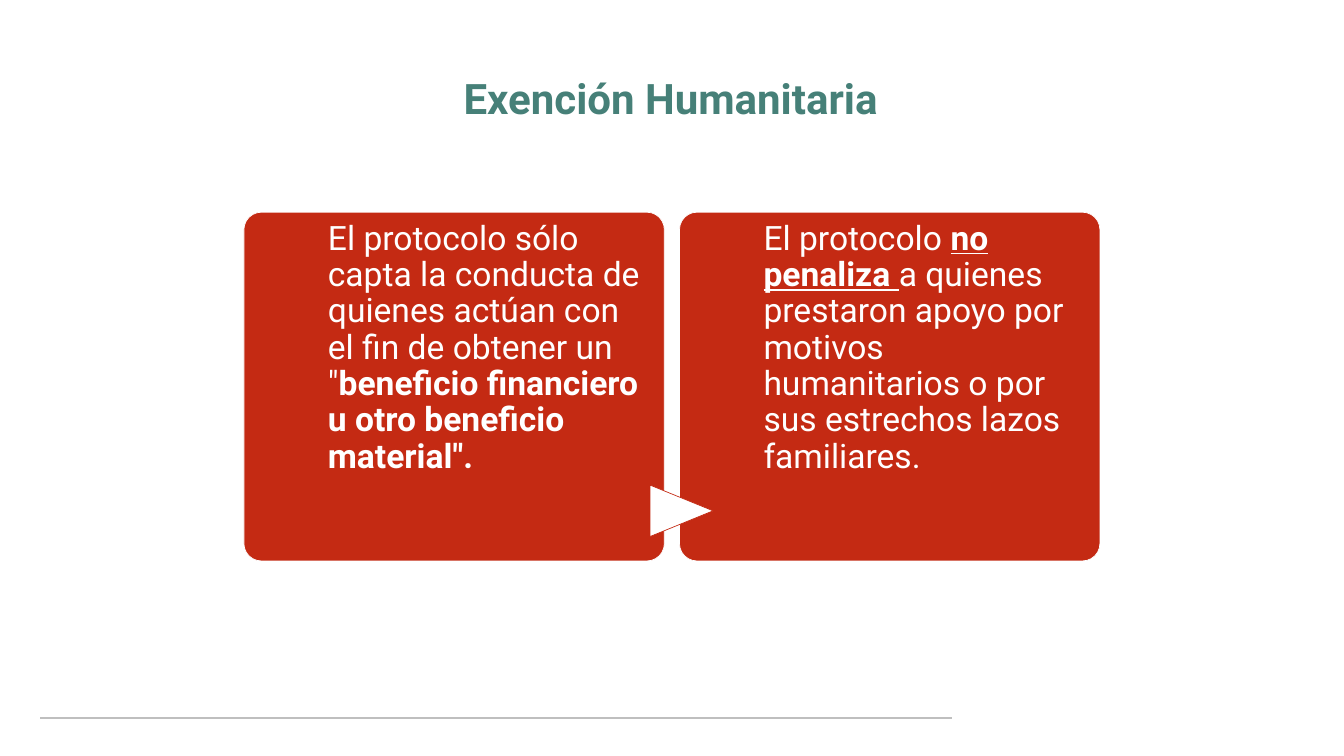
from dataclasses import dataclass

from pptx import Presentation
from pptx.dml.color import RGBColor
from pptx.enum.shapes import MSO_CONNECTOR, MSO_SHAPE
from pptx.enum.text import MSO_ANCHOR, PP_ALIGN
from pptx.oxml.ns import qn
from pptx.slide import Slide
from pptx.util import Inches, Pt

WIDTH, HEIGHT = 26.66, 15
FONT = "Roboto"
WHITE, RED, GREEN, GREY = "FFFFFF", "C42A13", "468078", "BFBFBF"

# Shares of the slide's width (x) and height (y)
MARGIN = 0.03
CARD_LEFT, CARD_TOP = 0.1815, 0.2807
CARD_WIDTH, CARD_HEIGHT = 0.3128, 0.4613
CARD_STEP = 0.3241
TEXT_INDENT, TEXT_WIDTH = 0.0625, 0.2333


@dataclass
class Run:
    text: str
    bold: bool = False
    underline: bool = False


@dataclass
class Card:
    column: int
    runs: list[Run]


CARDS = [
    Card(0, [
        Run('El protocolo sólo capta la conducta de quienes actúan con el fin de obtener un "'),
        Run('beneficio financiero u otro beneficio material".', bold=True),
    ]),
    Card(1, [
        Run("El protocolo "),
        Run("no penaliza ", bold=True, underline=True),
        Run("a quienes prestaron apoyo por motivos humanitarios o por sus estrechos lazos familiares."),
    ]),
]


def x(share: float) -> int:
    return Inches(WIDTH * share)


def y(share: float) -> int:
    return Inches(HEIGHT * share)


def color(value: str) -> RGBColor:
    return RGBColor.from_string(value)


def set_insets(frame, left: float, top: float, right: float, bottom: float) -> None:
    frame.margin_left, frame.margin_top = Inches(left), Inches(top)
    frame.margin_right, frame.margin_bottom = Inches(right), Inches(bottom)


def add_run(paragraph, content: Run, size: float, font_color: str) -> None:
    run = paragraph.add_run()
    run.text = content.text
    run.font.name = FONT
    run.font.size = Pt(size)
    run.font.bold = content.bold
    run.font.underline = content.underline
    run.font.color.rgb = color(font_color)


def add_filled_shape(slide: Slide, kind: MSO_SHAPE, box: tuple, fill: str, line: str):
    shape = slide.shapes.add_shape(kind, *box)
    shape.shadow.inherit = False
    shape.fill.solid()
    shape.fill.fore_color.rgb = color(fill)
    shape.line.color.rgb = color(line)
    shape.line.width = Pt(1)
    return shape


def format_title(slide: Slide, text: str) -> None:
    title = slide.shapes.title
    title.left, title.top = x(MARGIN), y(0.0367)
    title.width, title.height = x(0.938), y(0.1933)
    frame = title.text_frame
    frame.word_wrap = True
    frame.vertical_anchor = MSO_ANCHOR.MIDDLE
    set_insets(frame, 0.2, 0.1, 0.2, 0.1)
    paragraph = frame.paragraphs[0]
    paragraph.alignment = PP_ALIGN.CENTER
    paragraph.line_spacing = 0.9
    add_run(paragraph, Run(text, bold=True), 60, GREEN)


def add_footer_rule(slide: Slide) -> None:
    rule = slide.shapes.add_connector(
        MSO_CONNECTOR.STRAIGHT, x(MARGIN), y(0.95), x(0.7082), y(0.95))
    rule.line.color.rgb = color(GREY)
    rule.line.width = Pt(2.25)
    properties = rule._element.spPr
    properties.append(properties.makeelement(qn("a:effectLst"), {}))


def add_card(slide: Slide, card: Card) -> None:
    left = CARD_LEFT + card.column * CARD_STEP
    box = x(left), y(CARD_TOP), x(CARD_WIDTH), y(CARD_HEIGHT)
    shape = add_filled_shape(slide, MSO_SHAPE.ROUNDED_RECTANGLE, box, RED, WHITE)
    shape.adjustments[0] = 0.05


def add_card_text(slide: Slide, card: Card) -> None:
    left = CARD_LEFT + card.column * CARD_STEP + TEXT_INDENT
    frame = slide.shapes.add_textbox(
        x(left), y(CARD_TOP), x(TEXT_WIDTH), y(CARD_HEIGHT)).text_frame
    frame.word_wrap = True
    frame.vertical_anchor = MSO_ANCHOR.TOP
    set_insets(frame, 0, 0.18, 0, 0)
    paragraph = frame.paragraphs[0]
    paragraph.line_spacing = 0.9
    paragraph.space_after = Pt(16.8)
    for run in card.runs:
        add_run(paragraph, run, 48, WHITE)


def add_arrow(slide: Slide) -> None:
    box = x(0.488), y(0.634), Inches(1.02), Inches(1.25)
    arrow = add_filled_shape(slide, MSO_SHAPE.FLOWCHART_EXTRACT, box, WHITE, RED)
    arrow.rotation = 90


def main() -> None:
    presentation = Presentation()
    presentation.slide_width, presentation.slide_height = Inches(WIDTH), Inches(HEIGHT)
    slide = presentation.slides.add_slide(presentation.slide_layouts[5])
    slide.background.fill.solid()
    slide.background.fill.fore_color.rgb = color(WHITE)
    add_footer_rule(slide)
    format_title(slide, "Exención Humanitaria")
    for card in CARDS:
        add_card(slide, card)
    add_arrow(slide)
    for card in CARDS:
        add_card_text(slide, card)
    presentation.save("out.pptx")


if __name__ == "__main__":
    main()
